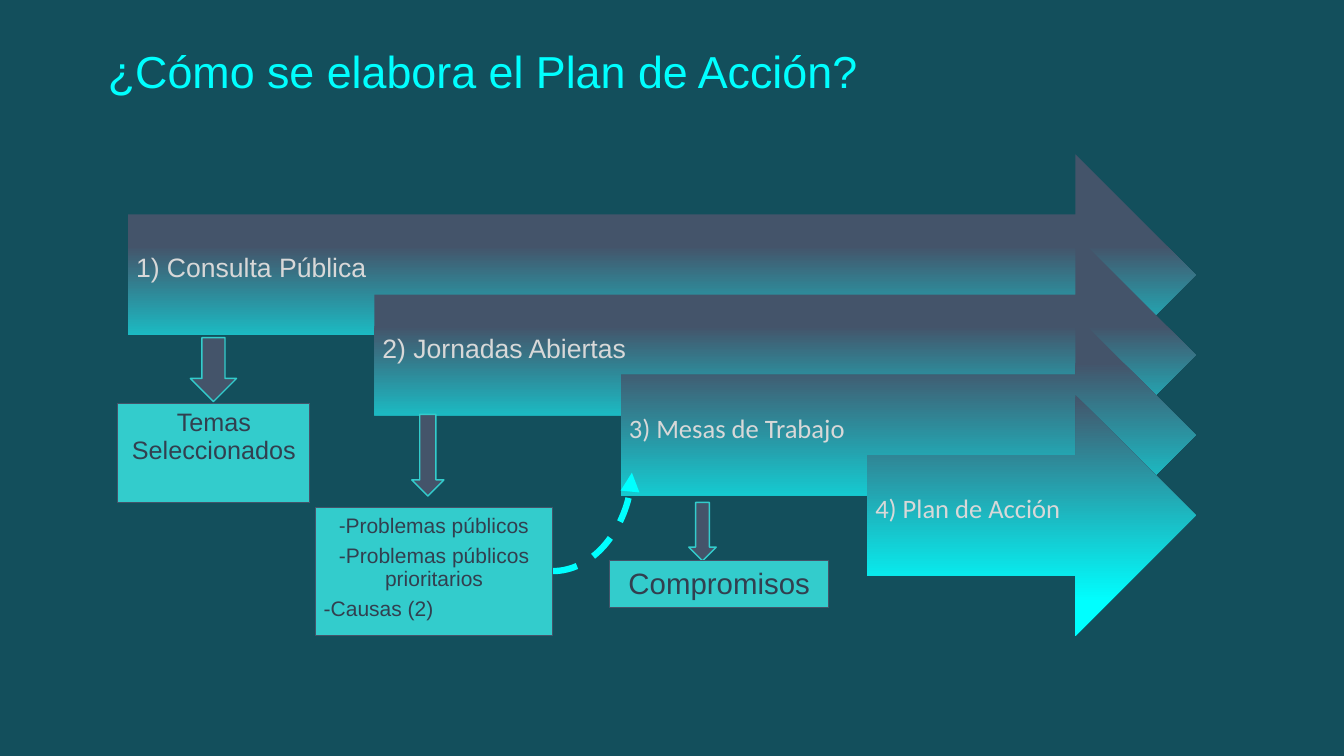
import copy

import lxml.etree
import pptx
import pptx.dml.color
import pptx.enum.dml
import pptx.enum.shapes
import pptx.enum.text
import pptx.oxml.ns
import pptx.util

Pt = pptx.util.Pt
RGBColor = pptx.dml.color.RGBColor
Shape = pptx.enum.shapes.MSO_SHAPE
Align = pptx.enum.text.PP_ALIGN
Anchor = pptx.enum.text.MSO_ANCHOR
qn = pptx.oxml.ns.qn

BACKGROUND = RGBColor(0x13, 0x4F, 0x5C)
CYAN = RGBColor(0x00, 0xFF, 0xFF)
SLATE = RGBColor(0x44, 0x54, 0x6A)
TURQUOISE = RGBColor(0x33, 0xCC, 0xCC)
PALE_GREY = RGBColor(0xD8, 0xD8, 0xD8)
DARK_SLATE = RGBColor(0x32, 0x3F, 0x4F)

STAGES = [
    ("1) Consulta Pública", "Arial", [(0, SLATE), (0.38, SLATE), (1, CYAN)]),
    ("2) Jornadas Abiertas", "Arial", [(0, SLATE), (0.38, SLATE), (1, CYAN)]),
    ("3) Mesas de Trabajo", "Calibri", [(0, SLATE), (0.2, SLATE), (1, CYAN)]),
    ("4) Plan de Acción", "Calibri", [(0, SLATE), (0.86, CYAN), (1, CYAN)]),
]
OUTCOMES = [
    ((84.2, 288, 137.1, 71.3), 18, 5, [
        (Align.CENTER, [("Temas Seleccionados", "Arial")]),
    ]),
    ((225.4, 362.3, 169.2, 91.4), 15, 5.8, [
        (Align.CENTER, [("-", "Calibri"), ("Problemas públicos", "Arial")]),
        (Align.CENTER, [("-Problemas públicos prioritarios", "Arial")]),
        (Align.LEFT, [("-Causas (2)", "Arial")]),
    ]),
    ((435.6, 400.4, 156.2, 33.6), 21, 5.8, [
        (Align.CENTER, [("Compromisos", "Arial")]),
    ]),
]
DOWN_ARROWS = [
    (136, 241.2, 33, 45.6),
    (294.1, 296, 23, 58.3),
    (492, 358.8, 19.6, 41.8),
]


def place(box):
    return [Pt(length) for length in box]


def set_frame(frame, anchor, insets):
    frame.word_wrap = True
    frame.vertical_anchor = anchor
    frame.margin_left, frame.margin_top, frame.margin_right, frame.margin_bottom = place(insets)


def write_run(paragraph, wording, font, size, color):
    run = paragraph.add_run()
    run.text = wording
    run.font.name = font
    run.font.size = Pt(size)
    run.font.color.rgb = color


def add_flat_shape(slide, preset, box):
    shape = slide.shapes.add_shape(preset, *place(box))
    shape.shadow.inherit = False
    return shape


def fill_gradient(shape, stops):
    shape.fill.gradient()
    shape.fill.gradient_angle = 270
    stop_list = next(shape.fill._xPr.iter(qn("a:gsLst")))
    while len(stop_list) < len(stops):
        stop_list.append(copy.deepcopy(stop_list[0]))
    for stop, (position, color) in zip(shape.fill.gradient_stops, stops):
        stop.position = position
        stop.color.rgb = color
    for color_element in stop_list.iter(qn("a:srgbClr")):
        for adjustment in list(color_element):
            color_element.remove(adjustment)


def add_title(slide, box):
    title = slide.shapes.add_textbox(*place(box))
    set_frame(title.text_frame, Anchor.TOP, (7.2, 3.6, 7.2, 3.6))
    write_run(title.text_frame.paragraphs[0], "¿Cómo se elabora el Plan de Acción?", "Arial", 32, CYAN)


def add_stages(slide, box, step_x, step_y):
    left, top, width, height = box
    arrow_height = height - step_y * (len(STAGES) - 1)
    for index, (wording, font, stops) in enumerate(STAGES):
        inset_x = step_x * index
        arrow = add_flat_shape(slide, Shape.RIGHT_ARROW,
                               (left + inset_x, top + step_y * index, width - inset_x, arrow_height))
        fill_gradient(arrow, stops)
        arrow.line.fill.background()
        set_frame(arrow.text_frame, Anchor.MIDDLE, (5.8, 5.8, 20.2, 13.7))
        label = arrow.text_frame.paragraphs[0]
        label.alignment = Align.LEFT
        label.line_spacing = 0.9
        write_run(label, wording, font, 19, PALE_GREY)


def add_down_arrow(slide, box):
    arrow = add_flat_shape(slide, Shape.DOWN_ARROW, box)
    arrow.fill.solid()
    arrow.fill.fore_color.rgb = SLATE
    arrow.line.color.rgb = TURQUOISE
    arrow.line.width = Pt(1)


def add_outcome(slide, box, size, inset, paragraphs):
    outcome = add_flat_shape(slide, Shape.RECTANGLE, box)
    outcome.fill.solid()
    outcome.fill.fore_color.rgb = TURQUOISE
    outcome.line.color.rgb = SLATE
    outcome.line.width = Pt(0.75)
    frame = outcome.text_frame
    set_frame(frame, Anchor.TOP, [inset] * 4)
    for index, (alignment, runs) in enumerate(paragraphs):
        paragraph = frame.add_paragraph() if index else frame.paragraphs[0]
        paragraph.alignment = alignment
        paragraph.line_spacing = 0.9
        paragraph.space_before = Pt(5.2 if index else 0)
        for wording, font in runs:
            write_run(paragraph, wording, font, size, DARK_SLATE)


def add_feedback_curve(slide, start, end):
    curve = slide.shapes.add_connector(pptx.enum.shapes.MSO_CONNECTOR.CURVE, *place(start + end))
    curve.line.color.rgb = CYAN
    curve.line.width = Pt(4.5)
    curve.line.dash_style = pptx.enum.dml.MSO_LINE.DASH
    properties = curve._element.spPr
    properties.find(qn("a:prstGeom")).set("prst", "curvedConnector2")
    lxml.etree.SubElement(properties.find(qn("a:ln")), qn("a:tailEnd"), type="triangle")
    lxml.etree.SubElement(properties, qn("a:effectLst"))


def main():
    presentation = pptx.Presentation()
    presentation.slide_width = Pt(960)
    presentation.slide_height = Pt(540)
    slide = presentation.slides.add_slide(presentation.slide_layouts[6])
    slide.background.fill.solid()
    slide.background.fill.fore_color.rgb = BACKGROUND

    add_title(slide, (70, 28, 674.6, 76.3))
    add_stages(slide, (91.4, 110.2, 762.8, 344), 176, 57.3)
    for box in DOWN_ARROWS:
        add_down_arrow(slide, box)
    add_feedback_curve(slide, (394.6, 408), (451.4, 337.7))
    for outcome in OUTCOMES:
        add_outcome(slide, *outcome)
    presentation.save("out.pptx")


if __name__ == "__main__":
    main()
